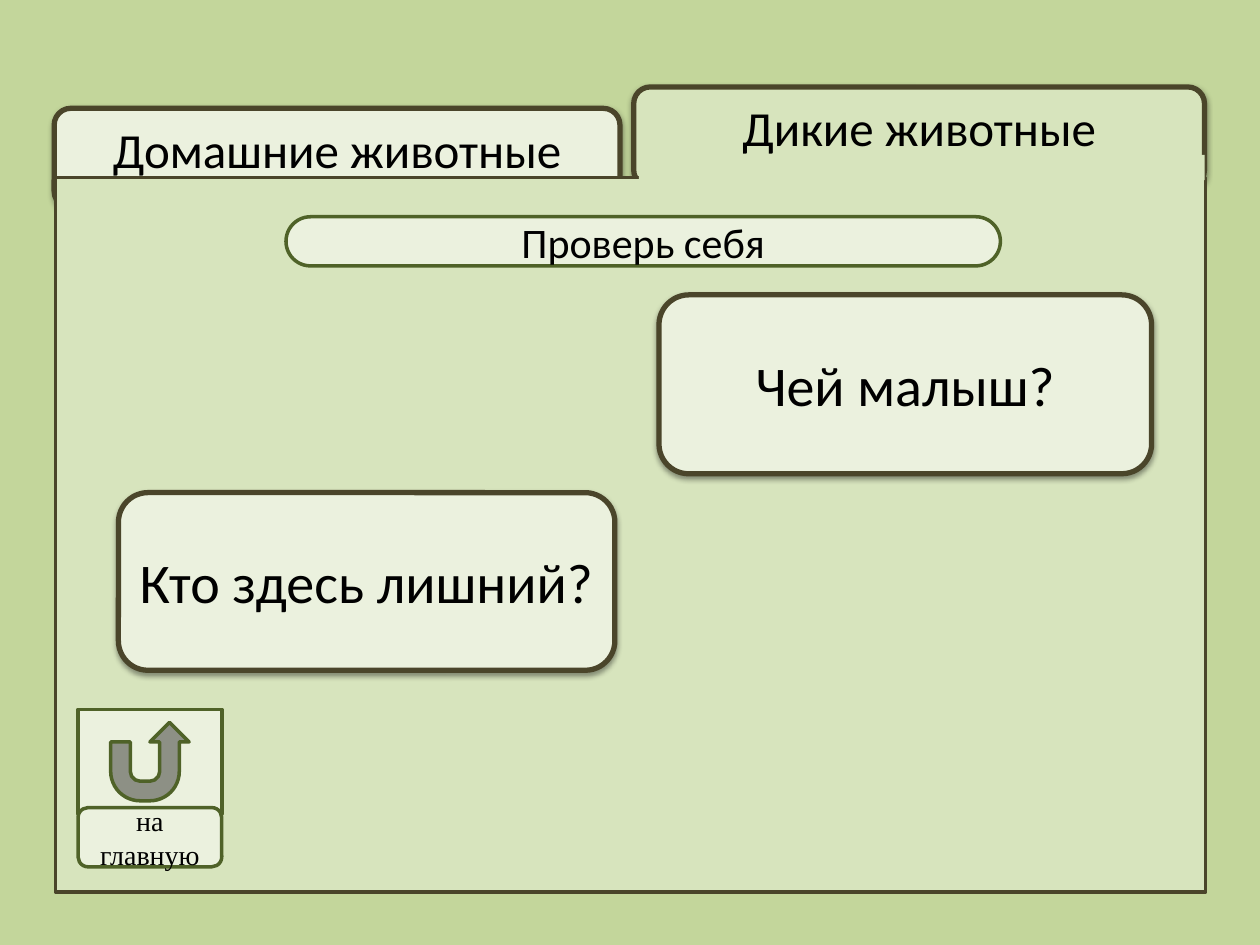
from lxml.etree import SubElement
from pptx import Presentation
from pptx.dml.color import RGBColor
from pptx.enum.shapes import MSO_SHAPE
from pptx.enum.text import MSO_ANCHOR, PP_ALIGN
from pptx.oxml.ns import qn
from pptx.util import Inches, Pt

BACKGROUND = RGBColor(0xC3, 0xD6, 0x9B)
FOLDER = RGBColor(0xD7, 0xE4, 0xBD)
PALE = RGBColor(0xEB, 0xF1, 0xDE)
BROWN = RGBColor(0x4A, 0x45, 0x2A)
GREEN = RGBColor(0x4F, 0x62, 0x28)
BLACK = RGBColor(0, 0, 0)


def add_box(parent, kind, place, fill, line=None, width=2):
    """Add a preset shape at place (left, top, width, height in inches)."""
    box = parent.shapes.add_shape(kind, *(Inches(length) for length in place))
    box.shadow.inherit = False
    box.fill.solid()
    box.fill.fore_color.rgb = fill
    if line is None:
        box.line.fill.background()
    else:
        box.line.color.rgb = line
        box.line.width = Pt(width)
    return box


def add_shadow(box):
    """Give the box a soft shadow that falls straight down."""
    effects = box._element.spPr.find(qn("a:effectLst"))
    shadow = SubElement(effects, qn("a:outerShdw"), blurRad=str(Pt(3.1)),
                        dist=str(Pt(1.6)), dir="5400000", rotWithShape="0")
    color = SubElement(shadow, qn("a:srgbClr"), val="000000")
    SubElement(color, qn("a:alpha"), val="38000")


def write_label(box, text, size, font="Calibri", anchor=MSO_ANCHOR.MIDDLE):
    frame = box.text_frame
    frame.word_wrap = True
    frame.vertical_anchor = anchor
    paragraph = frame.paragraphs[0]
    paragraph.text = text
    paragraph.alignment = PP_ALIGN.CENTER
    paragraph.font.name = font
    paragraph.font.size = Pt(size)
    paragraph.font.color.rgb = BLACK


def add_card(page, place, text, size, fill=PALE, anchor=MSO_ANCHOR.MIDDLE):
    """Add a raised rounded box with a thick brown outline."""
    card = add_box(page, MSO_SHAPE.ROUNDED_RECTANGLE, place, fill, BROWN, 3)
    add_shadow(card)
    write_label(card, text, size, anchor=anchor)


def add_folder(page):
    """Add two tabs, the sheet, and the patch that opens the active tab."""
    add_card(page, (0.43, 0.86, 4.49, 0.79), "Домашние животные", 28,
             anchor=MSO_ANCHOR.TOP)
    add_card(page, (5.03, 0.69, 4.53, 0.79), "Дикие животные", 28,
             fill=FOLDER, anchor=MSO_ANCHOR.TOP)
    add_box(page, MSO_SHAPE.RECTANGLE, (0.44, 1.41, 9.13, 5.67), FOLDER, BROWN)
    add_box(page, MSO_SHAPE.RECTANGLE, (5.07, 1.23, 4.49, 0.2), FOLDER)


def add_home_button(page):
    group = page.shapes.add_group_shape()
    add_box(group, MSO_SHAPE.ACTION_BUTTON_RETURN, (0.62, 5.63, 1.14, 0.83),
            PALE, GREEN)
    caption = add_box(group, MSO_SHAPE.ROUNDED_RECTANGLE,
                      (0.62, 6.41, 1.14, 0.47), PALE, GREEN)
    write_label(caption, "на главную", 16, font="Times New Roman")


def add_heading(page):
    pill = add_box(page, MSO_SHAPE.ROUNDED_RECTANGLE, (2.27, 1.72, 5.67, 0.39),
                   PALE, GREEN)
    pill.adjustments[0] = 0.5
    write_label(pill, "Проверь себя", 24)


def main():
    deck = Presentation()
    deck.slide_width, deck.slide_height = Inches(10), Inches(7.5)
    page = deck.slides.add_slide(deck.slide_layouts[6])
    page.background.fill.solid()
    page.background.fill.fore_color.rgb = BACKGROUND
    add_folder(page)
    add_card(page, (0.94, 3.91, 3.94, 1.41), "Кто здесь лишний?", 32)
    add_card(page, (5.23, 2.34, 3.91, 1.42), "Чей малыш?", 32)
    add_home_button(page)
    add_heading(page)
    deck.save("out.pptx")


if __name__ == "__main__":
    main()
